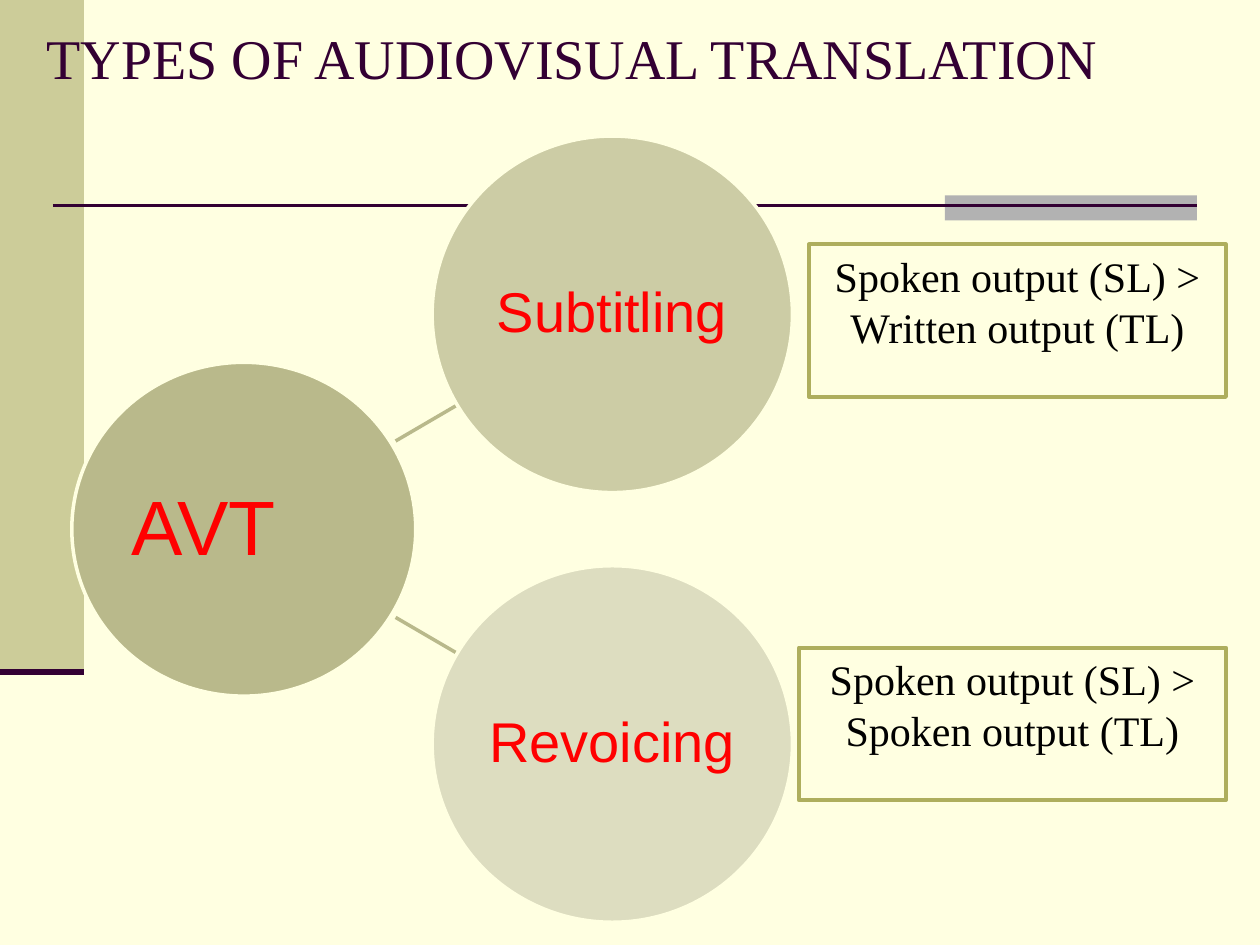
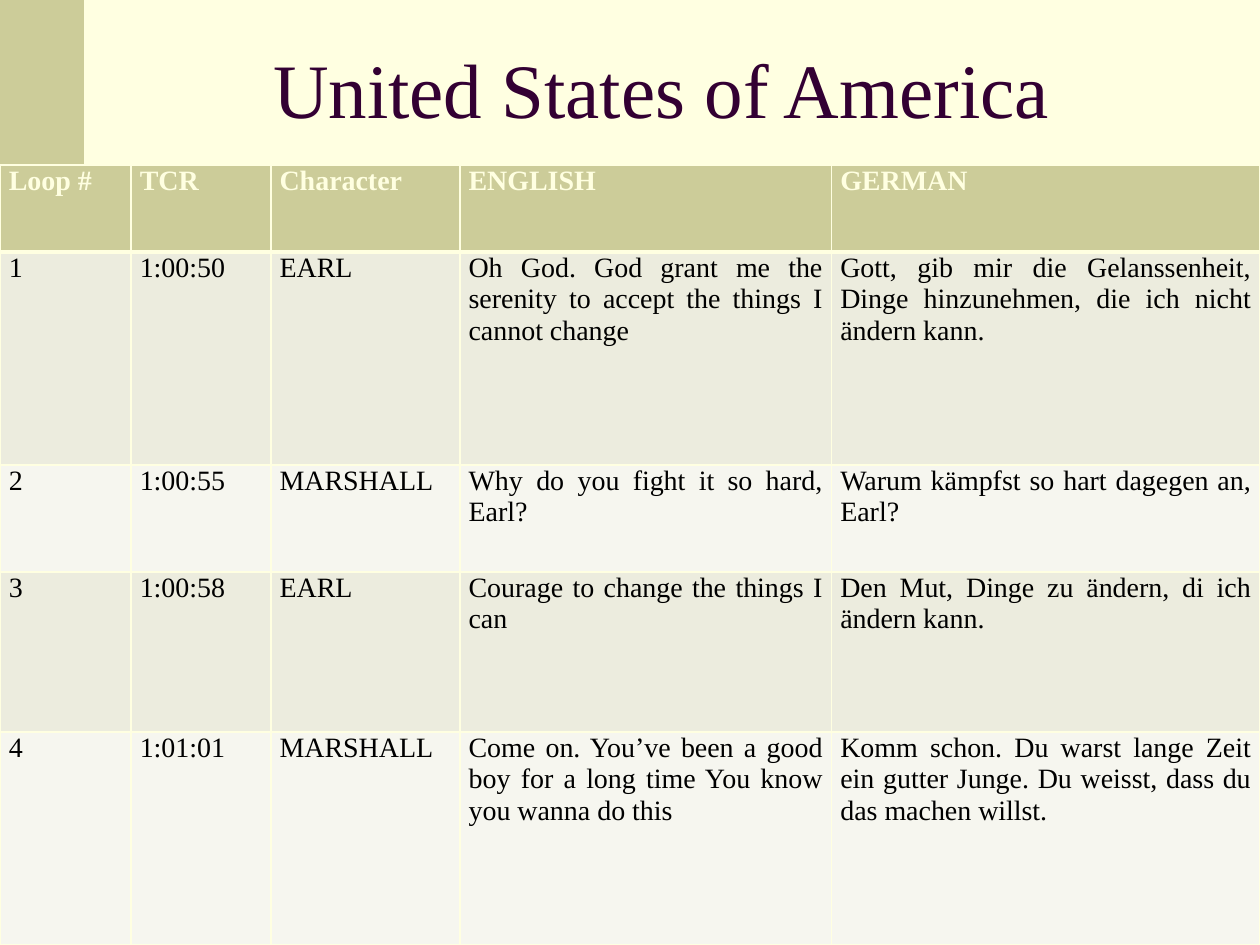
from lxml.etree import SubElement
from pptx import Presentation
from pptx.dml.color import RGBColor
from pptx.enum.shapes import MSO_CONNECTOR as Connector, MSO_SHAPE as Shape
from pptx.enum.text import MSO_ANCHOR as Anchor, MSO_AUTO_SIZE as AutoSize, PP_ALIGN as Align
from pptx.oxml import parse_xml
from pptx.oxml.ns import nsdecls, qn
from pptx.util import Inches, Pt

COLORS = {
    "page": "FFFFE1", "band": "CCCC99", "tab": "B2B2B2", "plum": "330033",
    "hub": "B9B98B", "frame": "AEAE5D", "label": "FF0000", "text": "000000",
    "odd": "ECECDE", "even": "F6F6EF", "subtitling": "CCCCA5", "revoicing": "DDDDC0",
}
SERIF, SANS = "Times New Roman", "Arial"
WIDTH, HEIGHT = 10, 7.5
BAND = (0, 0, WIDTH / 15, 5.33)
TAB = (0.75 * WIDTH, 1.55, 0.2 * WIDTH, 0.2)
RULES = [((0.42, 1.63), (9.5, 1.63), 1.5), ((0, 5.33), (BAND[2], 5.33), 3.5)]

TYPES_TITLE = "TYPES OF AUDIOVISUAL TRANSLATION"
HUB = "AVT"
BRANCHES = [
    ("Subtitling", "subtitling", -1, "Spoken output (SL) > Written output (TL)", (6.42, 1.94, 3.31, 1.21)),
    ("Revoicing", "revoicing", 1, "Spoken output (SL) > Spoken output (TL)", (6.34, 5.14, 3.39, 1.21)),
]
AXIS_Y = 4.2
HUB_SIZE, HUB_LEFT = (2.73, 2.65), 0.57
BRANCH_SIZE, BRANCH_LEFT, BRANCH_OFFSET = (2.86, 2.83), 3.43, 1.705
SPOKE = ((3.14, 0.7), (3.62, 0.98))

DIALOGUE_TITLE = "United States of America"
DIALOGUE = [
    ("Loop #", "TCR", "Character", "ENGLISH", "GERMAN"),
    ("1", "1:00:50", "EARL",
     "Oh God. God grant me the serenity to accept the things I cannot change",
     "Gott, gib mir die Gelanssenheit, Dinge hinzunehmen, die ich nicht ändern kann."),
    ("2", "1:00:55", "MARSHALL", "Why do you fight it so hard, Earl?",
     "Warum kämpfst so hart dagegen an, Earl?"),
    ("3", "1:00:58", "EARL", "Courage to change the things I can",
     "Den Mut, Dinge zu ändern, di ich ändern kann."),
    ("4", "1:01:01", "MARSHALL",
     "Come on. You’ve been a good boy for a long time You know you wanna do this",
     "Komm schon. Du warst lange Zeit ein gutter Junge. Du weisst, dass du das machen willst."),
]
COLUMN_WIDTHS = [1.04, 1.11, 1.5, 2.95, 3.4]
ROW_HEIGHTS = [0.69, 1.69, 0.85, 1.27, 1.69]

TITLE_FRAME = {"word_wrap": True, "auto_size": AutoSize.NONE, "vertical_anchor": Anchor.MIDDLE}
LABEL_FRAME = {"word_wrap": False, "vertical_anchor": Anchor.MIDDLE,
               **{f"margin_{side}": Inches(0.02) for side in ("left", "top", "right", "bottom")}}
NOTE_FRAME = {"word_wrap": True, "vertical_anchor": Anchor.TOP}
CELL_MARGINS = {"margin_left": Inches(0.07), "margin_right": Inches(0.07),
                "margin_top": 0, "margin_bottom": 0}
CENTERED = {"alignment": Align.CENTER}
LABEL_PARAGRAPH = {**CENTERED, "line_spacing": 0.9}
CELL_PARAGRAPH = {"alignment": Align.JUSTIFY, "line_spacing": Pt(18)}


def rgb(name):
    return RGBColor.from_string(COLORS[name])


def apply(target, values):
    for attribute, value in values.items():
        setattr(target, attribute, value)


def write(frame, text, color, size, font=SERIF, paragraph={}, layout={}, bold=False):
    apply(frame, layout)
    frame.text = text
    line = frame.paragraphs[0]
    apply(line, paragraph)
    apply(line.runs[0].font, {"name": font, "size": Pt(size), "bold": bold})
    line.runs[0].font.color.rgb = rgb(color)


def add_block(slide, kind, box, fill=None, outline=None, weight=2):
    block = slide.shapes.add_shape(kind, *map(Inches, box))
    block.shadow.inherit = False
    if fill:
        block.fill.solid()
        block.fill.fore_color.rgb = rgb(fill)
    else:
        block.fill.background()
    if outline:
        block.line.color.rgb = rgb(outline)
        block.line.width = Pt(weight)
    else:
        block.line.fill.background()
    return block


def add_rule(slide, start, end, color, weight):
    rule = slide.shapes.add_connector(Connector.STRAIGHT, *map(Inches, (*start, *end)))
    rule.line.color.rgb = rgb(color)
    rule.line.width = Pt(weight)
    SubElement(rule.element.spPr, qn("a:effectLst"))
    return rule


def decorate(layout, slide):
    layout.background.fill.solid()
    layout.background.fill.fore_color.rgb = rgb("page")
    decor = [add_block(slide, Shape.RECTANGLE, BAND, "band"),
             add_block(slide, Shape.RECTANGLE, TAB, "tab")]
    decor += [add_rule(slide, start, end, "plum", weight) for start, end, weight in RULES]
    for number, part in enumerate(decor, 20):
        part.element.xpath(".//p:cNvPr")[0].set("id", str(number))
        layout.shapes.element.append(part.element)


def set_title(slide, text, box, size, align):
    title = slide.shapes.title
    apply(title, dict(zip(("left", "top", "width", "height"), map(Inches, box))))
    write(title.text_frame, text, "plum", size, paragraph={"alignment": align}, layout=TITLE_FRAME)


def build_types(slide):
    set_title(slide, TYPES_TITLE, (0.27, 0, 9.21, 0.9), 32, Align.LEFT)
    for _, _, side, _, _ in BRANCHES:
        start, end = [(x, AXIS_Y + side * offset) for x, offset in SPOKE]
        add_rule(slide, start, end, "hub", 2)
    hub_top = AXIS_Y - HUB_SIZE[1] / 2
    add_block(slide, Shape.OVAL, (HUB_LEFT, hub_top, *HUB_SIZE), "hub", "page")
    for label, fill, side, note, note_box in BRANCHES:
        top = AXIS_Y + side * BRANCH_OFFSET - BRANCH_SIZE[1] / 2
        circle = add_block(slide, Shape.OVAL, (BRANCH_LEFT, top, *BRANCH_SIZE), fill, "page")
        write(circle.text_frame, label, "label", 32, SANS, LABEL_PARAGRAPH, LABEL_FRAME)
        box = add_block(slide, Shape.RECTANGLE, note_box, outline="frame", weight=2.25)
        write(box.text_frame, note, "text", 24, paragraph=CENTERED, layout=NOTE_FRAME)
    hub_label = slide.shapes.add_textbox(*map(Inches, (0.75, 3.75, 1.73, 0.84)))
    write(hub_label.text_frame, HUB, "label", 44, SANS, CENTERED, NOTE_FRAME)


def set_borders(cell, weights):
    properties = cell._tc.get_or_add_tcPr()
    for position, (side, weight) in enumerate(weights.items()):
        properties.insert(position, parse_xml(
            f'<a:ln{side} {nsdecls("a")} w="{Pt(weight)}"><a:solidFill>'
            f'<a:srgbClr val="{COLORS["page"]}"/></a:solidFill></a:ln{side}>'))


def build_dialogue(slide):
    set_title(slide, DIALOGUE_TITLE, (1, 0, 8.5, 1.39), 44, Align.CENTER)
    table_height = sum(ROW_HEIGHTS)
    table = slide.shapes.add_table(
        len(DIALOGUE), len(COLUMN_WIDTHS), 0, Inches(HEIGHT - table_height),
        Inches(WIDTH), Inches(table_height)).table
    table.horz_banding = False
    for column, width in zip(table.columns, COLUMN_WIDTHS):
        column.width = Inches(width)
    for index, (row, height, entries) in enumerate(zip(table.rows, ROW_HEIGHTS, DIALOGUE)):
        row.height = Inches(height)
        heading = index == 0
        fill = "band" if heading else ("even", "odd")[index % 2]
        for cell, entry in zip(row.cells, entries):
            apply(cell, CELL_MARGINS)
            cell.fill.solid()
            cell.fill.fore_color.rgb = rgb(fill)
            write(cell.text_frame, entry, "page" if heading else "text", 16,
                  paragraph=CELL_PARAGRAPH, bold=heading)
            set_borders(cell, {"L": 1, "R": 1, "T": 3 if index == 1 else 1, "B": 3 if heading else 1})


def main():
    deck = Presentation()
    apply(deck, {"slide_width": Inches(WIDTH), "slide_height": Inches(HEIGHT)})
    layout = deck.slide_layouts.get_by_name("Title Only")
    types_slide, dialogue_slide = [deck.slides.add_slide(layout) for _ in range(2)]
    decorate(layout, types_slide)
    build_types(types_slide)
    build_dialogue(dialogue_slide)
    deck.save("out.pptx")


if __name__ == "__main__":
    main()
